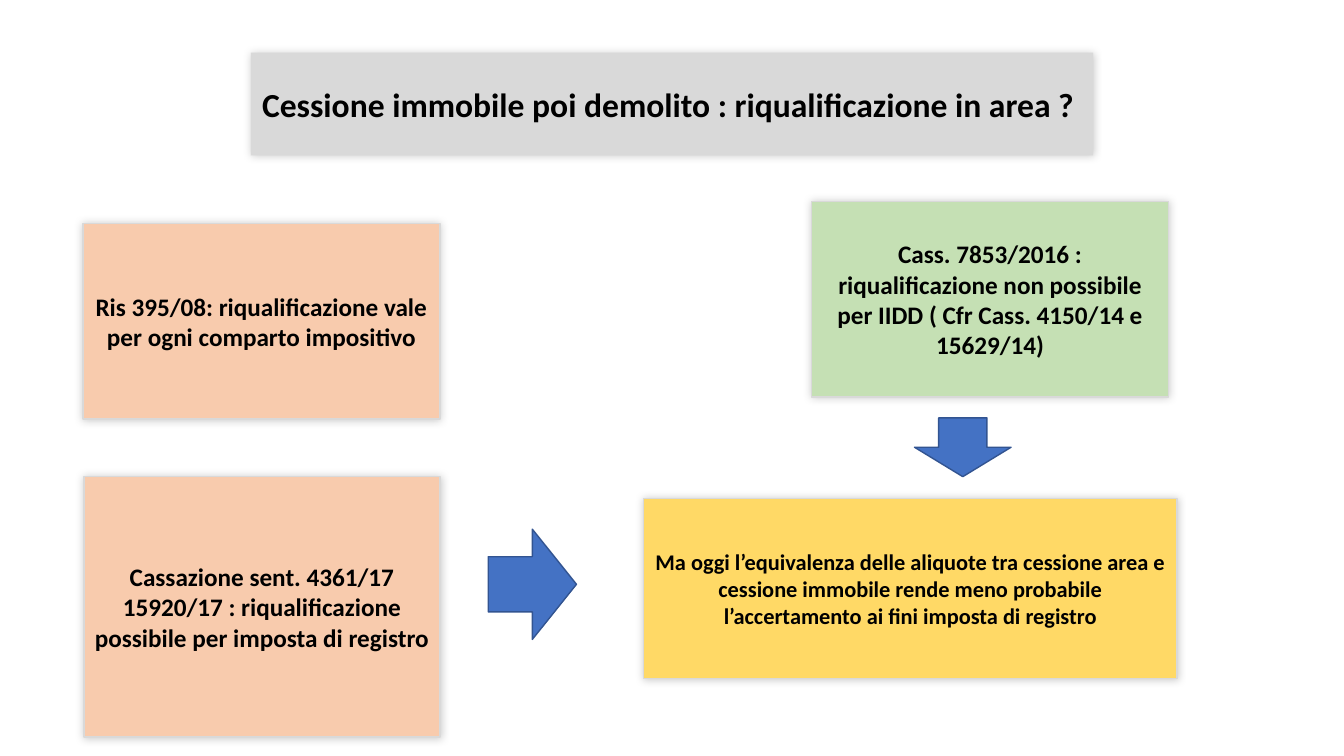
"""Build a slide on whether the sale of a demolished building counts as a sale of land."""
from lxml import etree
from pptx import Presentation, util as u
from pptx.dml.color import RGBColor
from pptx.enum import shapes, text
from pptx.oxml.ns import qn

PX = 9525
KIND = shapes.MSO_SHAPE


def paint(shape, fill, line=None):
    """Give a shape its fill, its outline and no shadow."""
    shape.fill.solid()
    shape.fill.fore_color.rgb = RGBColor.from_string(fill)
    if line:
        shape.line.color.rgb = RGBColor.from_string(line)
        shape.line.width = u.Pt(1)
    shape.shadow.inherit = False


def write(shape, words, size=18, color="000000", font="Calibri"):
    """Put bold centred text in a shape that casts a soft shadow."""
    frame = shape.text_frame
    frame.word_wrap = True
    frame.auto_size = text.MSO_AUTO_SIZE.NONE
    frame.vertical_anchor = text.MSO_ANCHOR.MIDDLE
    para = frame.paragraphs[0]
    para.alignment = text.PP_ALIGN.CENTER
    run = para.add_run()
    run.text = words
    run.font.name, run.font.size, run.font.bold = font, u.Pt(size), True
    run.font.color.rgb = RGBColor.from_string(color)
    effects = shape.element.spPr.find(qn("a:effectLst"))
    shade = etree.SubElement(effects, qn("a:outerShdw"), blurRad=str(u.Pt(6)),
                             dist="0", dir="13500000", rotWithShape="0")
    tint = etree.SubElement(shade, qn("a:srgbClr"), val="000000")
    etree.SubElement(tint, qn("a:alpha"), val="20000")


deck = Presentation()
deck.slide_width, deck.slide_height = 1280 * PX, 720 * PX
slide = deck.slides.add_slide(deck.slide_layouts[5])

title = slide.shapes.title
title.left, title.top, title.width, title.height = [n * PX for n in (239, 50, 802, 98)]
paint(title, "D9D9D9")
write(title, "Cessione immobile poi demolito : riqualificazione in area ? ", size=24)

boxes = [
    ((79, 213, 340, 186), "F8CBAD", 18,
     "Ris 395/08: riqualificazione vale per ogni comparto impositivo"),
    ((80, 454, 339, 248), "F8CBAD", 18,
     "Cassazione sent. 4361/17 15920/17 : riqualificazione possibile per imposta di registro"),
    ((773, 192, 340, 186), "C5E0B4", 18,
     "Cass. 7853/2016 : riqualificazione non possibile per IIDD ( Cfr Cass. 4150/14 e 15629/14)"),
    ((613, 475, 508, 171), "FFD966", 16,
     "Ma oggi l’equivalenza delle aliquote tra cessione area e cessione immobile rende "
     "meno probabile l’accertamento ai fini imposta di registro"),
]
for place, fill, size, words in boxes:
    box = slide.shapes.add_shape(KIND.RECTANGLE, *[n * PX for n in place])
    paint(box, fill, "D9D9D9")
    write(box, words, size=size)

arrows = [(KIND.RIGHT_ARROW, (465, 504, 84, 105)), (KIND.DOWN_ARROW, (871, 398, 92, 56))]
for kind, place in arrows:
    arrow = slide.shapes.add_shape(kind, *[n * PX for n in place])
    paint(arrow, "4472C4", "325491")

deck.save("out.pptx")
